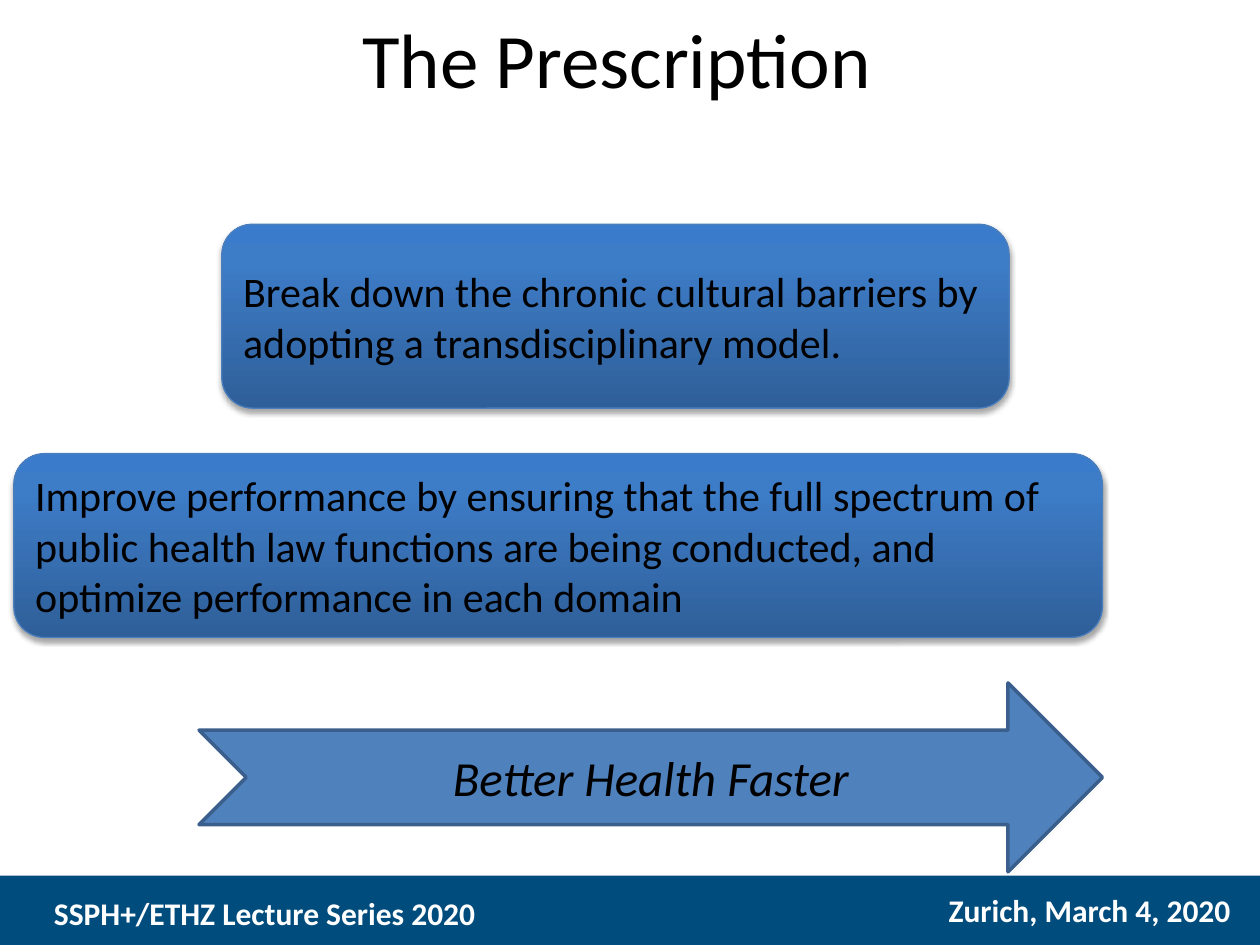
from copy import deepcopy

from lxml.etree import SubElement
from pptx import Presentation
from pptx.dml.color import RGBColor
from pptx.enum.shapes import MSO_SHAPE
from pptx.enum.text import MSO_ANCHOR, PP_ALIGN
from pptx.oxml.ns import qn
from pptx.util import Inches, Pt

COLORS = {
    "black": "000000",
    "white": "FFFFFF",
    "footer": "004C7D",
    "arrow": "4F81BD",
    "arrow_edge": "3A5F8C",
    "card_edge": "4B7EBC",
    "card_bottom": "2F5F99",
    "card_middle": "3D7CC7",
    "card_top": "3A7CCB",
}
CARD_GRADIENT = {0: "card_bottom", 0.8: "card_middle", 1: "card_top"}


def rgb(name):
    """Return the palette colour of that name."""
    return RGBColor.from_string(COLORS[name])


class SlideBuilder:
    """Hold the text style and the slide under construction."""

    font_name = "Calibri"

    def __init__(self, slide):
        """Start building on the given slide."""
        self.slide = slide

    def add_wording(self, shape, wording, size, color="black", align=PP_ALIGN.LEFT,
                    anchor=MSO_ANCHOR.MIDDLE, wrap=True, **emphasis):
        """Put one styled paragraph into a shape."""
        frame = shape.text_frame
        frame.word_wrap = wrap
        frame.vertical_anchor = anchor
        paragraph = frame.paragraphs[0]
        paragraph.alignment = align
        run = paragraph.add_run()
        run.text = wording
        values = {"name": self.font_name, "size": Pt(size), **emphasis}
        for attribute, value in values.items():
            setattr(run.font, attribute, value)
        run.font.color.rgb = rgb(color)

    def label(self, box, wording, size, **style):
        """Add a text box."""
        holder = self.slide.shapes.add_textbox(*map(Inches, box))
        self.add_wording(holder, wording, size, anchor=MSO_ANCHOR.TOP, **style)

    def block(self, preset, box, fill=None, edge=None, edge_width=0):
        """Add a preset shape with a plain fill and an optional edge."""
        shape = self.slide.shapes.add_shape(preset, *map(Inches, box))
        shape.shadow.inherit = False
        if fill:
            shape.fill.solid()
            shape.fill.fore_color.rgb = rgb(fill)
        if edge:
            shape.line.color.rgb = rgb(edge)
            shape.line.width = Pt(edge_width)
        else:
            shape.line.fill.background()
        return shape

    def card(self, box, wording):
        """Add a rounded gradient card with a soft shadow."""
        card = self.block(MSO_SHAPE.ROUNDED_RECTANGLE, box,
                          edge="card_edge", edge_width=0.75)
        card.fill.gradient()
        card.fill.gradient_angle = 90
        properties = card._element.spPr
        stops = properties.find(f".//{qn('a:gsLst')}")
        stops.append(deepcopy(stops[0]))
        for stop, (position, color) in zip(card.fill.gradient_stops,
                                           CARD_GRADIENT.items()):
            stop.position = position
            stop.color.rgb = rgb(color)
        shadow = SubElement(properties.find(qn("a:effectLst")), qn("a:outerShdw"),
                            blurRad=str(Pt(3.1)), dist=str(Pt(1.8)),
                            dir="5400000", rotWithShape="0")
        tint = SubElement(shadow, qn("a:srgbClr"), val=COLORS["black"])
        SubElement(tint, qn("a:alpha"), val="35000")
        self.add_wording(card, wording, 24)


def main():
    """Build and save the slide."""
    deck = Presentation()
    deck.slide_width, deck.slide_height = Inches(10), Inches(7.5)
    builder = SlideBuilder(deck.slides.add_slide(deck.slide_layouts[6]))

    builder.block(MSO_SHAPE.RECTANGLE, (0, 6.95, 10, 0.6), "footer")
    footer_style = {"color": "white", "bold": True, "wrap": False}
    builder.label((0.33, 7.05, 3.64, 0.4), "SSPH+/ETHZ Lecture Series 2020",
                  18, **footer_style)
    builder.label((7.43, 7.02, 2.46, 0.4), "Zurich, March 4, 2020",
                  18, **footer_style)

    builder.label((1.04, 0.04, 7.71, 1.38), "The Prescription", 44,
                  align=PP_ALIGN.CENTER)

    outcome = builder.block(MSO_SHAPE.NOTCHED_RIGHT_ARROW,
                            (1.58, 5.42, 7.17, 1.5), "arrow", "arrow_edge", 2)
    builder.add_wording(outcome, "Better Health Faster", 28,
                        align=PP_ALIGN.CENTER, italic=True)

    builder.card((1.76, 1.78, 6.25, 1.46),
                 "Break down the chronic cultural barriers by adopting "
                 "a transdisciplinary model.")
    builder.card((0.11, 3.6, 8.64, 1.46),
                 "Improve performance by ensuring that the full spectrum of "
                 "public health law functions are being conducted, and "
                 "optimize performance in each domain")
    deck.save("out.pptx")


if __name__ == "__main__":
    main()
